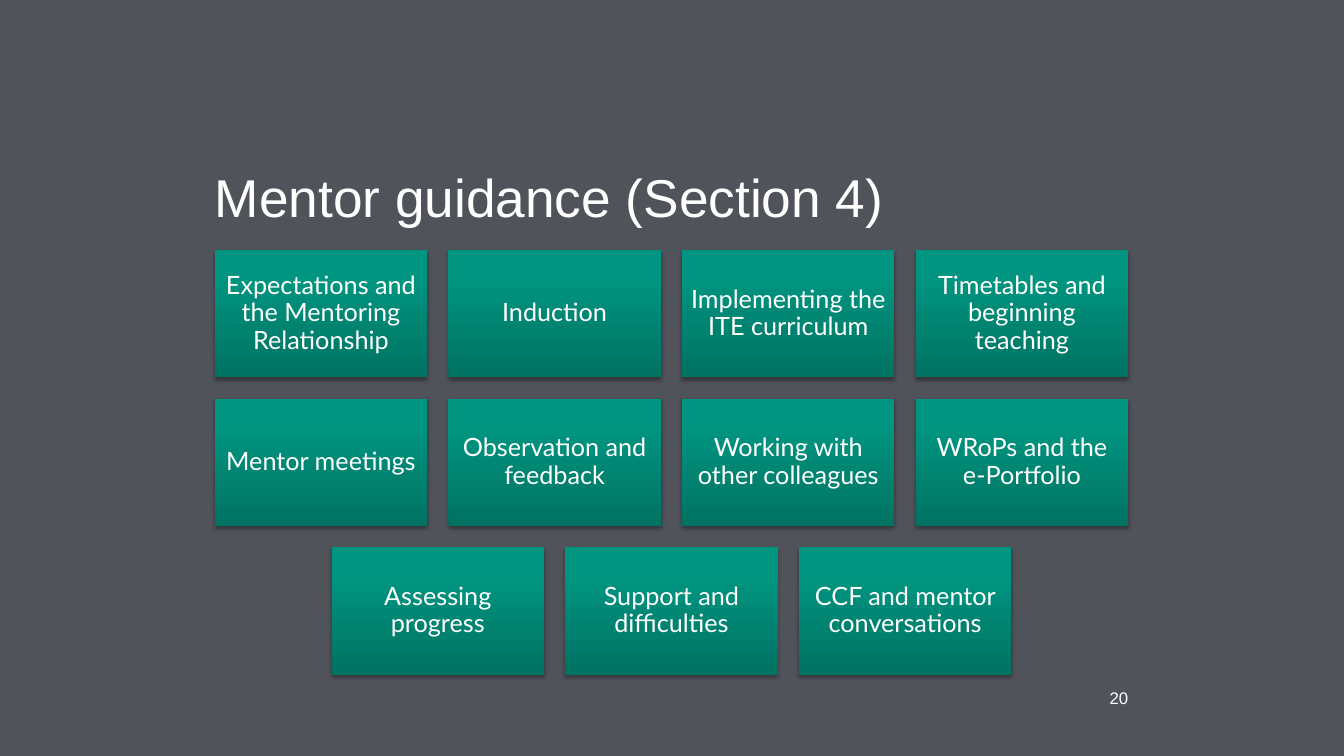
import copy

import lxml.etree
import pptx
import pptx.dml.color
import pptx.enum.shapes
import pptx.enum.text
import pptx.oxml
import pptx.oxml.ns
import pptx.util

TITLE = "Mentor guidance (Section 4)"
PAGE = "20"
TOPICS = [
    ["Expectations and the Mentoring Relationship", "Induction",
     "Implementing the ITE curriculum", "Timetables and beginning teaching"],
    ["Mentor meetings", "Observation and feedback",
     "Working with other colleagues", "WRoPs and the e-Portfolio"],
    ["Assessing progress", "Support and difficulties", "CCF and mentor conversations"],
]

COLORS = {"back": "50535A", "text": "FFFFFF", "dark": "007362",
          "mid": "009580", "light": "009680", "shadow": "000000"}
STOPS = [(0, "dark"), (0.8, "mid"), (1, "light")]

SLIDE_W, SLIDE_H = 13.33, 7.5
LEFT, WIDTH = 2.13, 9.06
GRID_TOP = 2.48
COLUMNS = 4
GAP_SHARE = 0.1
TILE_W = WIDTH / (COLUMNS + GAP_SHARE * (COLUMNS - 1))
TILE_H = TILE_W * 0.6
GAP = TILE_W * GAP_SHARE

ALIGN = pptx.enum.text.PP_ALIGN
ANCHOR = pptx.enum.text.MSO_ANCHOR
STYLES = {
    "title": {"font": {"name": "Arial", "size": 38}, "inset": 0,
              "frame": {"vertical_anchor": ANCHOR.BOTTOM},
              "para": {"alignment": ALIGN.LEFT}},
    "page": {"font": {"name": "Arial", "size": 12}, "inset": 0,
             "frame": {"vertical_anchor": ANCHOR.TOP},
             "para": {"alignment": ALIGN.RIGHT}},
    "tile": {"font": {"name": "Lato", "size": 18}, "inset": 0.07,
             "frame": {"vertical_anchor": ANCHOR.MIDDLE},
             "para": {"alignment": ALIGN.CENTER, "line_spacing": 0.9}},
}


def rgb(name):
    return pptx.dml.color.RGBColor.from_string(COLORS[name])


def box(*lengths):
    return [pptx.util.Inches(v) for v in lengths]


def write(sp, text, style):
    fmt = STYLES[style]
    tf = sp.text_frame
    tf.text = text
    tf.word_wrap = True
    tf.auto_size = pptx.enum.text.MSO_AUTO_SIZE.NONE
    for side in ("left", "top", "right", "bottom"):
        setattr(tf, f"margin_{side}", pptx.util.Inches(fmt["inset"]))
    for key, value in fmt["frame"].items():
        setattr(tf, key, value)
    p = tf.paragraphs[0]
    for key, value in fmt["para"].items():
        setattr(p, key, value)
    font = p.runs[0].font
    font.name = fmt["font"]["name"]
    font.size = pptx.util.Pt(fmt["font"]["size"])
    font.color.rgb = rgb("text")


def shade(sp):
    sp.line.fill.background()
    sp.fill.gradient()
    sp.fill.gradient_angle = 90
    first = sp._element.xpath(".//a:gs")[0]
    first.addnext(copy.deepcopy(first))
    for stop, (position, color) in zip(sp.fill.gradient_stops, STOPS):
        stop.position = position
        stop.color.rgb = rgb(color)


def cast_shadow(sp):
    sp.shadow.inherit = False
    effects = sp._element.spPr.find(pptx.oxml.ns.qn("a:effectLst"))
    outer = lxml.etree.SubElement(
        effects, pptx.oxml.ns.qn("a:outerShdw"),
        blurRad=str(pptx.util.Pt(3.1)), dist=str(pptx.util.Pt(1.8)),
        dir="5400000", algn="ctr", rotWithShape="0")
    color = lxml.etree.SubElement(outer, pptx.oxml.ns.qn("a:srgbClr"), val=COLORS["shadow"])
    lxml.etree.SubElement(color, pptx.oxml.ns.qn("a:alpha"), val="35000")


def add_tile(s, text, left, top):
    sp = s.shapes.add_shape(pptx.enum.shapes.MSO_SHAPE.RECTANGLE,
                            *box(left, top, TILE_W, TILE_H))
    shade(sp)
    cast_shadow(sp)
    write(sp, text, "tile")


def main():
    prs = pptx.Presentation()
    prs.slide_width, prs.slide_height = box(SLIDE_W, SLIDE_H)
    s = prs.slides.add_slide(prs.slide_layouts.get_by_name("Title Only"))
    s.background.fill.solid()
    s.background.fill.fore_color.rgb = rgb("back")

    title = s.shapes.title
    title.left, title.top, title.width, title.height = box(LEFT, 1.35, WIDTH, 0.91)
    write(title, TITLE, "title")

    page_w = 0.74
    page = s.shapes.add_textbox(*box(LEFT + WIDTH - page_w, 6.82, page_w, 0.28))
    write(page, PAGE, "page")

    for row, topics in enumerate(TOPICS):
        indent = (COLUMNS - len(topics)) * (TILE_W + GAP) / 2
        for column, topic in enumerate(topics):
            add_tile(s, topic, LEFT + indent + column * (TILE_W + GAP),
                     GRID_TOP + row * (TILE_H + GAP))

    prs.save("out.pptx")


if __name__ == "__main__":
    main()
